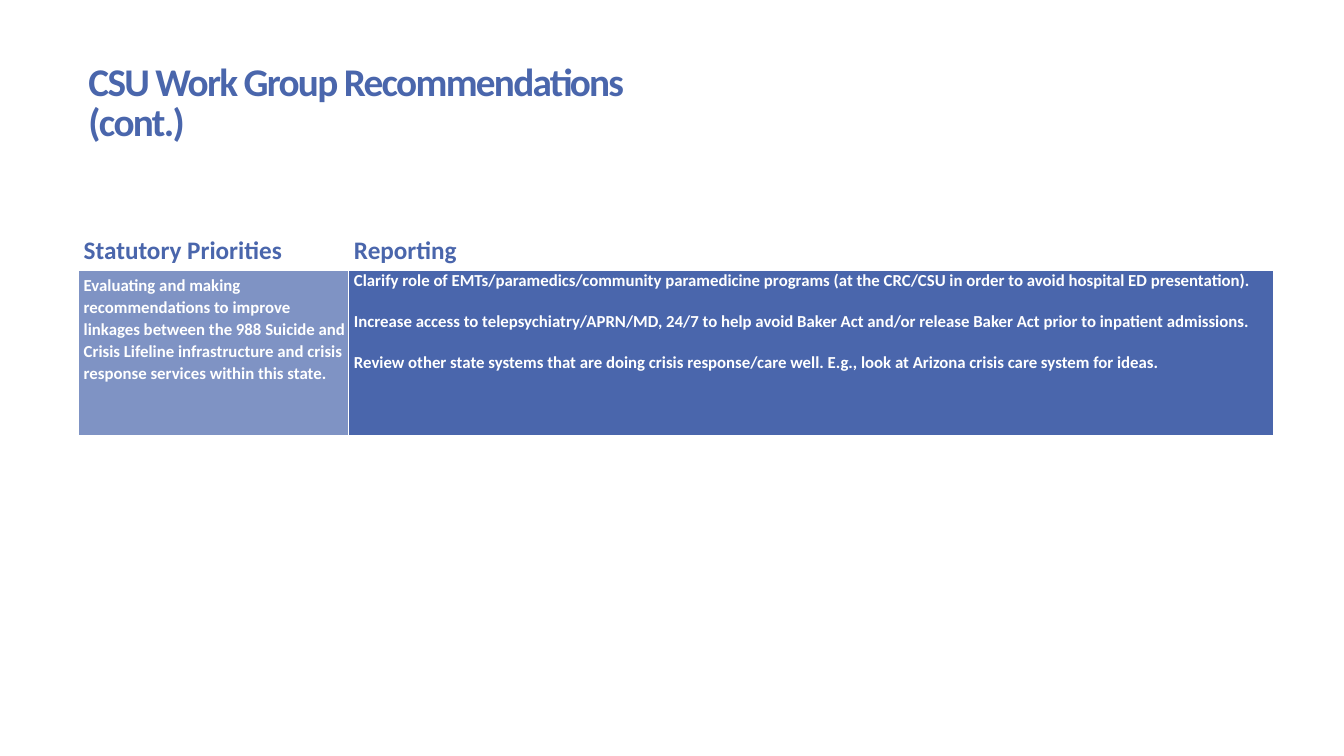
import pptx
import pptx.dml.color
import pptx.enum.text
import pptx.oxml
import pptx.oxml.ns
import pptx.util
from pptx.util import Cm

BLUE = "4A66AC"
WHITE = "FFFFFF"
HEADERS = ["Statutory Priorities", "Reporting"]
PRIORITY = (
    "Evaluating and making recommendations to improve linkages between the "
    "988 Suicide and Crisis Lifeline infrastructure and crisis response "
    "services within this state."
)
REPORTING = [
    "Clarify role of EMTs/paramedics/community paramedicine programs "
    "(at the CRC/CSU in order to avoid hospital ED presentation).",
    "Increase access to telepsychiatry/APRN/MD, 24/7 to help avoid Baker Act "
    "and/or release Baker Act prior to inpatient admissions.",
    "Review other state systems that are doing crisis response/care well. "
    "E.g., look at Arizona crisis care system for ideas.",
]


def color(value):
    return pptx.dml.color.RGBColor.from_string(value)


def write_paragraphs(text_frame, texts, size, text_color, line_spacing=1.0, gap=0):
    text_frame.word_wrap = True
    for index, text in enumerate(texts):
        paragraph = text_frame.paragraphs[0] if index == 0 else text_frame.add_paragraph()
        paragraph.line_spacing = line_spacing
        paragraph.space_before = pptx.util.Pt(gap if index else 0)
        run = paragraph.add_run()
        run.text = text
        run.font.name = "Calibri"
        run.font.size = pptx.util.Pt(size)
        run.font.bold = True
        run.font.color.rgb = color(text_color)


def style_cell(cell, fill, margins, edges, opacity=100):
    cell.margin_left, cell.margin_top, cell.margin_right, cell.margin_bottom = map(Cm, margins)
    cell.fill.solid()
    cell.fill.fore_color.rgb = color(fill)
    namespace = pptx.oxml.ns.nsdecls("a")
    properties = cell._tc.get_or_add_tcPr()
    if opacity < 100:
        fill_color = properties.find(".//" + pptx.oxml.ns.qn("a:srgbClr"))
        fill_color.append(pptx.oxml.parse_xml(f'<a:alpha {namespace} val="{opacity * 1000}"/>'))
    for position, edge in enumerate(edges):
        border = pptx.oxml.parse_xml(
            f'<a:ln{edge} {namespace} w="12700"><a:solidFill>'
            f'<a:srgbClr val="{WHITE}"/></a:solidFill></a:ln{edge}>'
        )
        properties.insert(position, border)


def add_title(slide, left, top, width, height):
    text_frame = slide.shapes.add_textbox(left, top, width, height).text_frame
    write_paragraphs(text_frame, ["CSU Work Group Recommendations (cont.)"], 28, BLUE, 0.85)
    text_frame.paragraphs[0].runs[0].font._element.set("spc", "-120")


def add_recommendations(slide, left, top, width, height):
    table = slide.shapes.add_table(2, 2, left, top, width, height).table
    table.first_row = False
    table.horz_banding = False
    table.columns[0].width = Cm(6.81)
    table.columns[1].width = width - table.columns[0].width
    table.rows[0].height = Cm(0.97)
    table.rows[1].height = height - table.rows[0].height

    margins = (0.13, 0.1, 0.08, 0.1)
    for column, (header, side) in enumerate(zip(HEADERS, "RL")):
        cell = table.cell(0, column)
        style_cell(cell, WHITE, margins, [side, "B"])
        cell.vertical_anchor = pptx.enum.text.MSO_ANCHOR.MIDDLE
        write_paragraphs(cell.text_frame, [header], 18, BLUE)

    priority_cell, reporting_cell = table.cell(1, 0), table.cell(1, 1)
    style_cell(priority_cell, BLUE, margins, ["R", "T"], opacity=70)
    write_paragraphs(priority_cell.text_frame, [PRIORITY], 12, WHITE, 1.07)
    style_cell(reporting_cell, BLUE, (0.13, 0, 0.13, 0.15), ["L", "T"])
    write_paragraphs(reporting_cell.text_frame, REPORTING, 12, WHITE, gap=14.65)


def main():
    presentation = pptx.Presentation()
    presentation.slide_width = Cm(33.87)
    presentation.slide_height = Cm(19.05)
    slide = presentation.slides.add_slide(presentation.slide_layouts[6])
    add_title(slide, Cm(1.98), Cm(1.5), Cm(15.72), Cm(1.37))
    add_recommendations(slide, Cm(1.98), Cm(5.84), Cm(30.12), Cm(5.13))
    presentation.save("out.pptx")


if __name__ == "__main__":
    main()
